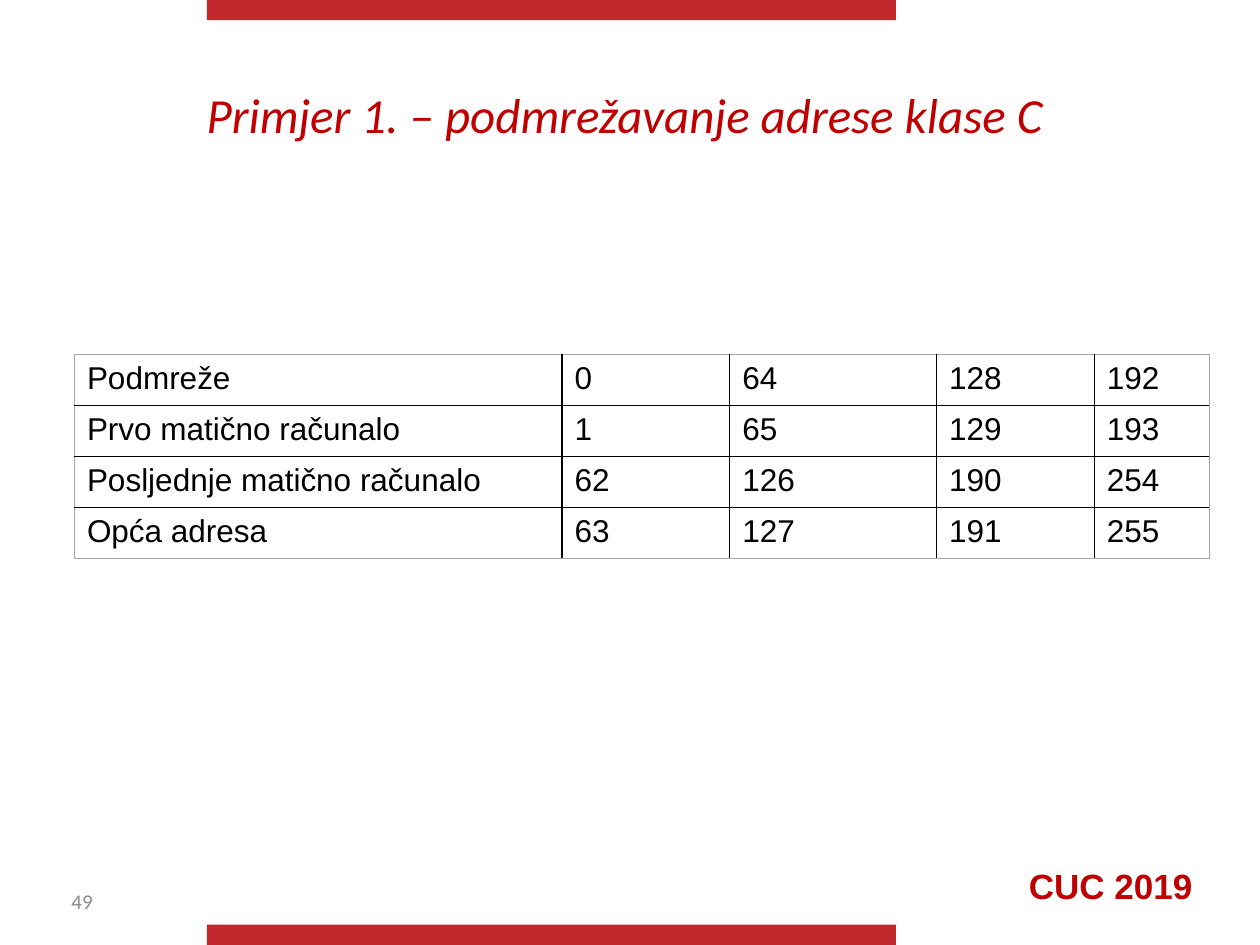
from dataclasses import dataclass
from typing import NamedTuple

from lxml import etree
from pptx import Presentation
from pptx.dml.color import RGBColor
from pptx.enum.shapes import MSO_SHAPE
from pptx.enum.text import MSO_ANCHOR, PP_ALIGN
from pptx.oxml.ns import qn
from pptx.util import Cm, Pt

RECTANGLE = MSO_SHAPE.RECTANGLE
MIDDLE, TOP = MSO_ANCHOR.MIDDLE, MSO_ANCHOR.TOP
LEFT, CENTER = PP_ALIGN.LEFT, PP_ALIGN.CENTER
TITLE_ONLY = 5


@dataclass(frozen=True)
class Theme:
    band: str = "C1272D"
    accent: str = "C00000"
    muted: str = "8C8C8C"
    ink: str = "000000"
    frame: str = "A6A6A6"
    heading_font: str = "Calibri"
    body_font: str = "Arial"
    title_size: float = 28
    event_size: float = 20
    table_size: float = 18
    number_size: float = 12
    grid_width: float = 1
    frame_width: float = 0.25


class Box(NamedTuple):
    left: float
    top: float
    width: float
    height: float

    def lengths(self) -> list:
        return [Cm(value) for value in self]


class TextStyle(NamedTuple):
    font: str
    size: float
    color: str
    bold: bool = False
    italic: bool = False
    align: PP_ALIGN = LEFT
    anchor: MSO_ANCHOR = MIDDLE


class SubnetRow(NamedTuple):
    label: str
    addresses: tuple


THEME = Theme()
SLIDE_WIDTH, SLIDE_HEIGHT = 25.4, 19.05
BAND_HEIGHT = 0.41
TITLE_BOX = Box(3.91, 1.4, 19.25, 1.78)
EVENT_BOX = Box(20.09, 17.3, 4.6, 1.12)
NUMBER_BOX = Box(1.19, 17.65, 5.92, 1.02)
COLUMN_WIDTHS = (9.83, 3.38, 4.17, 3.18, 2.31)
ROW_HEIGHT = 1.03
SUBNETS = (0, 64, 128, 192)
SUBNET_ROWS = [
    SubnetRow(label, tuple(subnet + offset for subnet in SUBNETS))
    for label, offset in (
        ("Podmreže", 0),
        ("Prvo matično računalo", 1),
        ("Posljednje matično računalo", 62),
        ("Opća adresa", 63),
    )
]


def write(frame, text: str, style: TextStyle) -> None:
    frame.text = text
    frame.word_wrap = True
    frame.vertical_anchor = style.anchor
    paragraph = frame.paragraphs[0]
    paragraph.alignment = style.align
    font = paragraph.runs[0].font
    font.name, font.size = style.font, Pt(style.size)
    font.bold, font.italic = style.bold, style.italic
    font.color.rgb = RGBColor.from_string(style.color)


def add_band(slide, top: float) -> None:
    band = slide.shapes.add_shape(RECTANGLE, *Box(4.17, top, 13.89, BAND_HEIGHT).lengths())
    band.shadow.inherit = False
    band.fill.solid()
    band.fill.fore_color.rgb = RGBColor.from_string(THEME.band)
    band.line.fill.background()


def add_label(slide, box: Box, text: str, style: TextStyle) -> None:
    write(slide.shapes.add_textbox(*box.lengths()).text_frame, text, style)


def add_border(cell, side: str, outer: bool) -> None:
    width = THEME.frame_width if outer else THEME.grid_width
    color = THEME.frame if outer else THEME.ink
    line = etree.SubElement(cell._tc.get_or_add_tcPr(), qn(f"a:{side}"), w=str(Pt(width)))
    fill = etree.SubElement(line, qn("a:solidFill"))
    etree.SubElement(fill, qn("a:srgbClr"), val=color)


def add_subnet_table(slide, rows: list, style: TextStyle) -> None:
    box = Box(1.5, 7.14, sum(COLUMN_WIDTHS), ROW_HEIGHT * len(rows))
    table = slide.shapes.add_table(len(rows), len(COLUMN_WIDTHS), *box.lengths()).table
    table.first_row = table.horz_banding = False
    for column, width in zip(table.columns, COLUMN_WIDTHS):
        column.width = Cm(width)
    last_row, last_column = len(rows) - 1, len(COLUMN_WIDTHS) - 1
    for r, row in enumerate(rows):
        table.rows[r].height = Cm(ROW_HEIGHT)
        for c, value in enumerate((row.label, *row.addresses)):
            cell = table.cell(r, c)
            write(cell.text_frame, str(value), style)
            edges = {"lnL": c == 0, "lnR": c == last_column, "lnT": r == 0, "lnB": r == last_row}
            for side, outer in edges.items():
                add_border(cell, side, outer)
            cell.fill.background()


def main() -> None:
    deck = Presentation()
    deck.slide_width, deck.slide_height = Cm(SLIDE_WIDTH), Cm(SLIDE_HEIGHT)
    slide = deck.slides.add_slide(deck.slide_layouts[TITLE_ONLY])

    for top in (SLIDE_HEIGHT - BAND_HEIGHT, 0):
        add_band(slide, top)
    add_label(slide, EVENT_BOX, "CUC 2019", TextStyle(
        THEME.body_font, THEME.event_size, THEME.accent, bold=True, align=CENTER, anchor=TOP))

    title = slide.shapes.title
    title.left, title.top, title.width, title.height = TITLE_BOX.lengths()
    write(title.text_frame, "Primjer 1. – podmrežavanje adrese klase C", TextStyle(
        THEME.heading_font, THEME.title_size, THEME.accent, italic=True))

    add_label(slide, NUMBER_BOX, "49", TextStyle(
        THEME.heading_font, THEME.number_size, THEME.muted))
    add_subnet_table(slide, SUBNET_ROWS, TextStyle(
        THEME.body_font, THEME.table_size, THEME.ink, anchor=TOP))
    deck.save("out.pptx")


if __name__ == "__main__":
    main()
